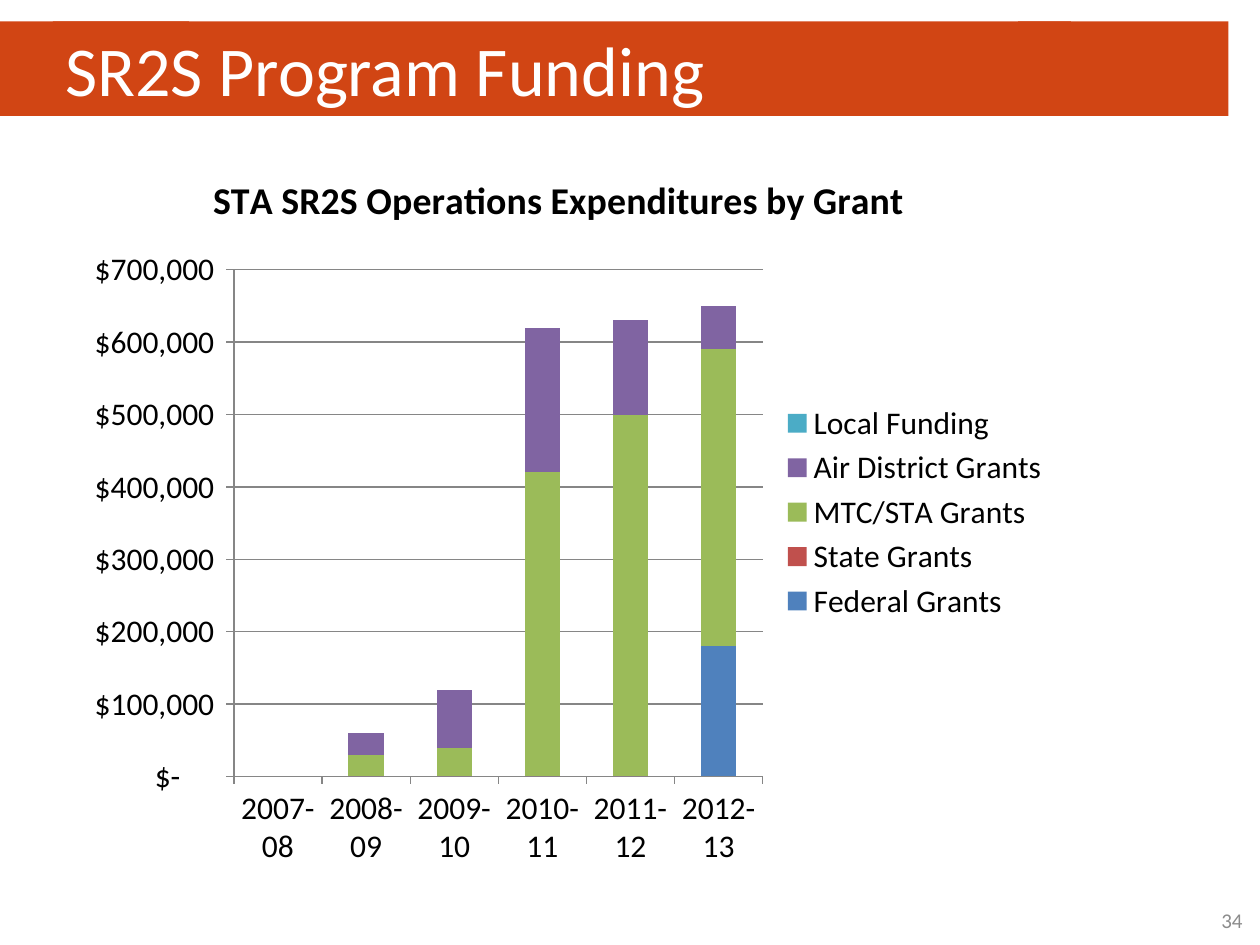
import pptx
import pptx.util
import pptx.chart.data
import pptx.dml.color
import pptx.enum.chart
import pptx.enum.text
import pptx.enum.shapes
import pptx.oxml
import pptx.oxml.ns

WIDE, HIGH = 10, 7.5
FONT = "Calibri"
BAND = "D14514"
YEARS = ["2007-08", "2008-09", "2009-10", "2010-11", "2011-12", "2012-13"]
GRANTS = [
    ("Federal Grants", "4F81BD", [None, 0, 0, 0, 0, 180000]),
    ("State Grants", "C0504D", [None, 0, 0, 0, 0, 0]),
    ("MTC/STA Grants", "9BBB59", [None, 30000, 40000, 420000, 500000, 410000]),
    ("Air District Grants", "8064A2", [None, 30000, 80000, 200000, 130000, 60000]),
    ("Local Funding", "4BACC6", [None, 0, 0, 0, 0, 0]),
]
MONEY = '_("$"* #,##0_);_("$"* \\(#,##0\\);_("$"* "-"??_);_(@_)'


def color(code):
    return pptx.dml.color.RGBColor.from_string(code)


def box(x, y, w, h):
    """Turn shares of the slide into lengths."""
    shares = (x * WIDE, y * HIGH, w * WIDE, h * HIGH)
    return [pptx.util.Inches(round(n, 2)) for n in shares]


def apply(item, form):
    for name, value in form.items():
        setattr(item, name, value)


def style(font, size, code, bold=False):
    apply(font, {"name": FONT, "size": pptx.util.Pt(size), "bold": bold})
    font.color.rgb = color(code)


def write(shape, text, size, code, align):
    frame = shape.text_frame
    apply(frame, {"word_wrap": True,
                  "vertical_anchor": pptx.enum.text.MSO_ANCHOR.MIDDLE})
    para = frame.paragraphs[0]
    apply(para, {"text": text, "alignment": align})
    style(para.font, size, code)


def band(slide, x, w):
    shape = slide.shapes.add_shape(
        pptx.enum.shapes.MSO_SHAPE.RECTANGLE, *box(x, 0.023, w, 0.1))
    shape.shadow.inherit = False
    shape.fill.solid()
    shape.fill.fore_color.rgb = color(BAND)
    shape.line.fill.background()
    return shape


def place(chart, **shares):
    """Fix the inner plot area, in shares of the chart."""
    rows = "".join(f'<c:{key} val="{val}"/>' for key, val in shares.items())
    layout = pptx.oxml.parse_xml(
        f'<c:layout {pptx.oxml.ns.nsdecls("c")}><c:manualLayout>'
        '<c:layoutTarget val="inner"/><c:xMode val="edge"/><c:yMode val="edge"/>'
        f'{rows}</c:manualLayout></c:layout>')
    area = chart.plots[0]._element.getparent()
    for old in area.findall(pptx.oxml.ns.qn("c:layout")):
        area.remove(old)
    area.insert(0, layout)


def bars(slide):
    data = pptx.chart.data.CategoryChartData()
    data.categories = YEARS
    for name, _, values in GRANTS:
        data.add_series(name, values)
    kind = pptx.enum.chart.XL_CHART_TYPE.COLUMN_STACKED
    chart = slide.shapes.add_chart(
        kind, *box(0.051, 0.153, 0.792, 0.777), data).chart
    style(chart.font, 18, "000000")

    chart.has_title = True
    para = chart.chart_title.text_frame.paragraphs[0]
    para.text = "STA SR2S Operations Expenditures by Grant "
    style(para.font, 21.6, "000000", True)

    chart.has_legend = True
    apply(chart.legend, {"include_in_layout": False,
                         "position": pptx.enum.chart.XL_LEGEND_POSITION.RIGHT})

    plot = chart.plots[0]
    apply(plot, {"gap_width": 150, "overlap": 100, "vary_by_categories": False})
    for series, (_, code, _) in zip(plot.series, GRANTS):
        series.format.fill.solid()
        series.format.fill.fore_color.rgb = color(code)

    tick = pptx.enum.chart.XL_TICK_MARK
    years, money = chart.category_axis, chart.value_axis
    apply(money, {"minimum_scale": 0, "maximum_scale": 700000,
                  "major_unit": 100000, "has_major_gridlines": True})
    apply(money.tick_labels, {"number_format": MONEY,
                              "number_format_is_linked": False})
    for axis in (years, money):
        apply(axis, {"major_tick_mark": tick.OUTSIDE,
                     "minor_tick_mark": tick.NONE})
    for part in (years, money, money.major_gridlines):
        part.format.line.color.rgb = color("868686")
        part.format.line.width = pptx.util.Pt(0.75)
    place(chart, x=0.17, y=0.17, w=0.53, h=0.69)


def main():
    deck = pptx.Presentation()
    apply(deck, {"slide_width": pptx.util.Inches(WIDE),
                 "slide_height": pptx.util.Inches(HIGH)})
    slide = deck.slides.add_slide(deck.slide_layouts[6])
    align = pptx.enum.text.PP_ALIGN
    band(slide, 0, 0.15)
    band(slide, 0.808, 0.167)
    head = band(slide, 0.042, 0.808)
    write(head, "SR2S Program Funding", 40, "FFFFFF", align.LEFT)
    page = slide.shapes.add_textbox(*box(0.929, 0.947, 0.067, 0.053))
    write(page, "34", 12, "8C8C8C", align.RIGHT)
    bars(slide)
    deck.save("out.pptx")


if __name__ == "__main__":
    main()
